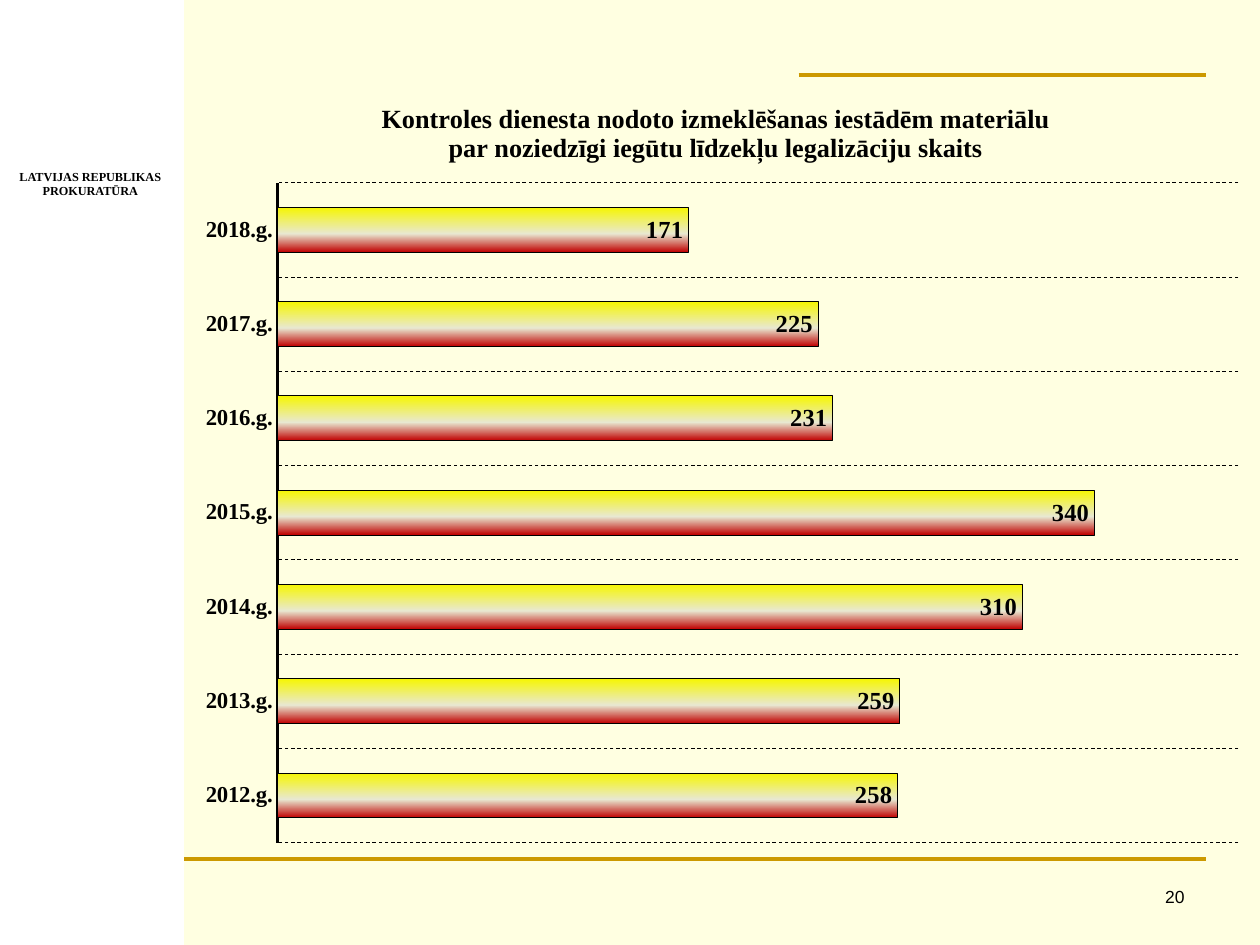
from lxml import etree
from pptx import Presentation
from pptx.chart.data import CategoryChartData
from pptx.dml.color import RGBColor
from pptx.enum.chart import XL_CHART_TYPE, XL_LABEL_POSITION, XL_TICK_MARK
from pptx.enum.dml import MSO_LINE
from pptx.enum.shapes import MSO_CONNECTOR, MSO_SHAPE
from pptx.enum.text import MSO_AUTO_SIZE, PP_ALIGN
from pptx.oxml import parse_xml
from pptx.oxml.ns import nsdecls, qn
from pptx.util import Cm, Pt

BAR = XL_CHART_TYPE.BAR_CLUSTERED
INSIDE_END = XL_LABEL_POSITION.INSIDE_END
NO_TICK = XL_TICK_MARK.NONE
DASH = MSO_LINE.DASH
STRAIGHT = MSO_CONNECTOR.STRAIGHT
RECTANGLE = MSO_SHAPE.RECTANGLE
FIT_SHAPE = MSO_AUTO_SIZE.SHAPE_TO_FIT_TEXT
CENTER, RIGHT = PP_ALIGN.CENTER, PP_ALIGN.RIGHT

COLORS = {"background": "FFFFE1", "panel": "FFFFFF", "rule": "CC9900", "ink": "000000"}
BAR_STOPS = [(0, "F6F600"), (59, "E8E8D1"), (100, "C00000")]
SERIF, SANS = "Times New Roman", "Arial"

SLIDE_WIDTH, SLIDE_HEIGHT = 25.4, 19.05
PANEL_WIDTH = 3.71
RULE_RIGHT = 24.31
TOP_RULE, BOTTOM_RULE = 1.52, 17.32

TITLE_LINES = [
    "Kontroles dienesta nodoto izmeklēšanas iestādēm materiālu",
    "par noziedzīgi iegūtu līdzekļu legalizāciju skaits",
]
FIRST_YEAR = 2012
CASES = [258, 259, 310, 340, 231, 225, 171]


def color(name):
    return RGBColor.from_string(COLORS[name])


def format_font(font, **values):
    for name, value in values.items():
        setattr(font, name, value)
    font.color.rgb = color("ink")


def format_line(line, name, width, dash=None):
    line.color.rgb = color(name)
    line.width = Pt(width)
    if dash is not None:
        line.dash_style = dash


def add_text(slide, box, lines, alignment, wrap=True, **font_values):
    shape = slide.shapes.add_textbox(*map(Cm, box))
    frame = shape.text_frame
    frame.word_wrap = wrap
    if not wrap:
        frame.auto_size = FIT_SHAPE
    frame.text = "\n".join(lines)
    for paragraph in frame.paragraphs:
        paragraph.alignment = alignment
        format_font(paragraph.font, **font_values)


def add_rule(slide, left, right, top):
    rule = slide.shapes.add_connector(STRAIGHT, Cm(left), Cm(top), Cm(right), Cm(top))
    format_line(rule.line, "rule", 2.25)
    etree.SubElement(rule._element.spPr, qn("a:effectLst"))


def add_side_panel(slide, left, top, width, height):
    panel = slide.shapes.add_shape(RECTANGLE, Cm(left), Cm(top), Cm(width), Cm(height))
    panel.shadow.inherit = False
    panel.fill.solid()
    panel.fill.fore_color.rgb = color("panel")
    panel.line.fill.background()
    add_text(slide, (left + 0.13, top + 3.28, width - 0.33, 0.84),
             ["LATVIJAS REPUBLIKAS", "PROKURATŪRA"], CENTER, wrap=False,
             size=Pt(7), bold=True, name=SERIF)


def set_layout(element, position, values, inner=False):
    """Place a chart part by fractions of the chart's size."""
    for old in element.findall(qn("c:layout")):
        element.remove(old)
    target = '<c:layoutTarget val="inner"/>' if inner else ""
    modes = "".join(f'<c:{axis}Mode val="edge"/>' for axis in "xy")
    sizes = "".join(f'<c:{key} val="{value}"/>' for key, value in values.items())
    element.insert(position, parse_xml(
        f'<c:layout {nsdecls("c")}><c:manualLayout>{target}{modes}{sizes}'
        "</c:manualLayout></c:layout>"))


def fill_chart_area(chart):
    properties = parse_xml(
        f'<c:spPr {nsdecls("c", "a")}><a:solidFill><a:srgbClr val="{COLORS["background"]}"/>'
        "</a:solidFill><a:ln><a:noFill/></a:ln></c:spPr>")
    chart._chartSpace.find(qn("c:chart")).addnext(properties)


def fill_bars(series):
    format_line(series.format.line, "ink", 0.5)
    stops = "".join(f'<a:gs pos="{position * 1000}"><a:srgbClr val="{value}"/></a:gs>'
                    for position, value in BAR_STOPS)
    gradient = parse_xml(
        f'<a:gradFill {nsdecls("a")} rotWithShape="1"><a:gsLst>{stops}</a:gsLst>'
        '<a:lin ang="5400000" scaled="0"/></a:gradFill>')
    series._element.find(qn("c:spPr")).insert(0, gradient)


def format_title(chart):
    frame = chart.chart_title.text_frame
    frame.text = "\n".join(TITLE_LINES)
    for paragraph in frame.paragraphs:
        paragraph.alignment = CENTER
        format_font(paragraph.font, size=Pt(15), bold=True, name=SERIF)
    set_layout(chart.chart_title._element, 1, {"x": 0.18, "y": 0.03})


def format_axes(chart):
    years = chart.category_axis
    years.major_tick_mark = years.minor_tick_mark = NO_TICK
    format_font(years.tick_labels.font, size=Pt(13), bold=True, name=SERIF)
    format_line(years.format.line, "ink", 1.5)
    years.has_major_gridlines = True
    format_line(years.major_gridlines.format.line, "ink", 0.5, DASH)
    values = chart.value_axis
    values.minimum_scale, values.maximum_scale = 0, 400
    values.has_major_gridlines = False
    values.visible = False


def add_case_chart(slide, left, top, width, height):
    data = CategoryChartData()
    data.categories = [f"{FIRST_YEAR + index}.g." for index in range(len(CASES))]
    data.add_series("Series 1", CASES)
    chart = slide.shapes.add_chart(
        BAR, Cm(left), Cm(top), Cm(width), Cm(height), data).chart
    chart.has_legend = False
    format_font(chart.font, size=Pt(10), name=SERIF)
    fill_chart_area(chart)
    format_title(chart)
    format_axes(chart)
    plot = chart.plots[0]
    plot.gap_width = 110
    plot.vary_by_categories = False
    fill_bars(plot.series[0])
    labels = plot.series[0].data_labels
    labels.show_value = True
    labels.position = INSIDE_END
    format_font(labels.font, size=Pt(14), bold=True, name=SERIF)
    set_layout(chart._chartSpace.find(".//" + qn("c:plotArea")), 0,
               {"x": 0.087, "y": 0.137, "w": 0.893, "h": 0.842}, inner=True)


def main():
    presentation = Presentation()
    presentation.slide_width, presentation.slide_height = Cm(SLIDE_WIDTH), Cm(SLIDE_HEIGHT)
    slide = presentation.slides.add_slide(presentation.slide_layouts[6])
    slide.background.fill.solid()
    slide.background.fill.fore_color.rgb = color("background")

    add_side_panel(slide, 0, 0, PANEL_WIDTH, SLIDE_HEIGHT)
    add_case_chart(slide, PANEL_WIDTH, TOP_RULE,
                   SLIDE_WIDTH - PANEL_WIDTH, BOTTOM_RULE - TOP_RULE)
    add_rule(slide, PANEL_WIDTH, RULE_RIGHT, BOTTOM_RULE)
    add_rule(slide, 16.1, RULE_RIGHT, TOP_RULE)
    add_text(slide, (18.85, 17.73, 5.28, 0.89), ["20"], RIGHT, size=Pt(10), name=SANS)
    presentation.save("out.pptx")


if __name__ == "__main__":
    main()
